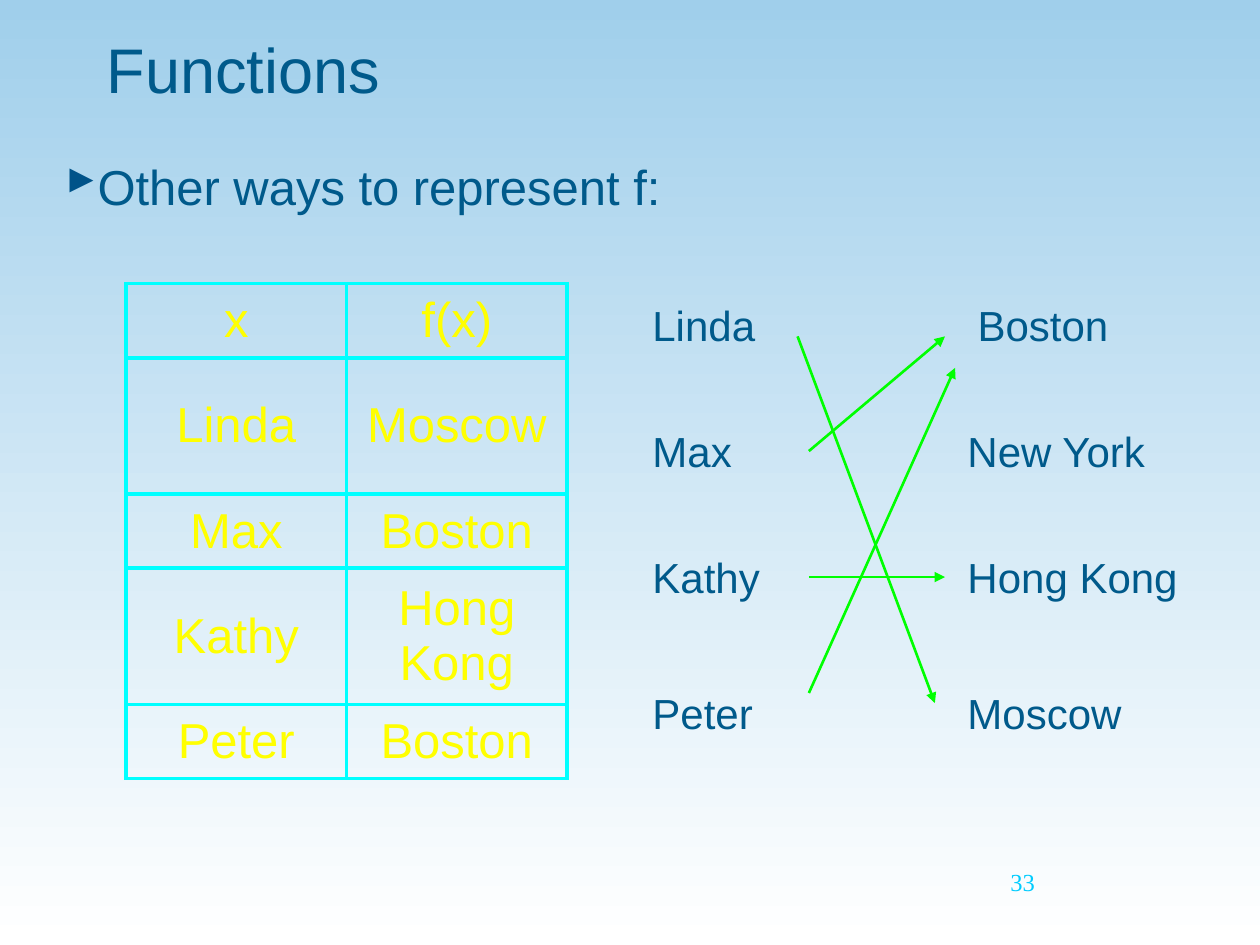
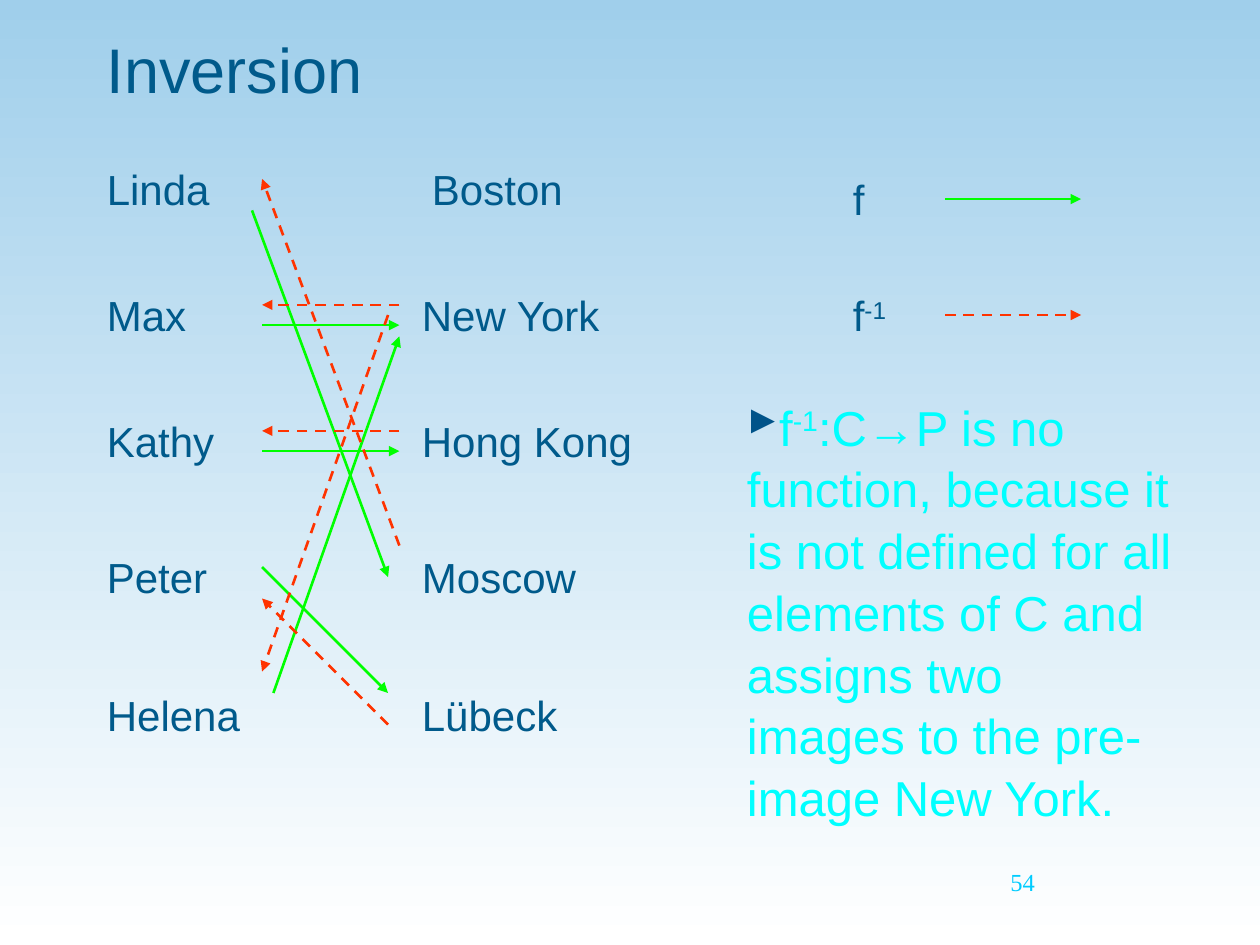
from lxml.etree import SubElement
from pptx import Presentation
from pptx.dml.color import RGBColor
from pptx.enum.dml import MSO_LINE_DASH_STYLE as Dash
from pptx.enum.shapes import MSO_CONNECTOR as Connector
from pptx.enum.text import MSO_ANCHOR as Anchor, PP_ALIGN as Align
from pptx.oxml.ns import qn
from pptx.util import Inches, Pt

SKY = RGBColor(0xA0, 0xCF, 0xEB)
WHITE = RGBColor(0xFF, 0xFF, 0xFF)
NAVY = RGBColor(0x00, 0x5A, 0x8B)
BULLET = RGBColor(0x00, 0x53, 0x89)
CYAN = RGBColor(0x00, 0xFF, 0xFF)
YELLOW = RGBColor(0xFF, 0xFF, 0x00)
GREEN = RGBColor(0x00, 0xFF, 0x00)
RED = RGBColor(0xFF, 0x33, 0x00)
PAGE_BLUE = RGBColor(0x00, 0xCC, 0xFF)

ROW_OFFSETS = (0, 1, 2, 3.08, 4.17)
CITY_OFFSET = 2.5
BOSTON_INDENT = 0.08
LABEL_HEIGHT = 0.57

FUNCTION_ARROWS = (
    (1.25, 0.34, 2.34, 3.25),
    (1.34, 1.25, 2.42, 0.34),
    (1.34, 2.25, 2.42, 2.25),
    (1.34, 3.17, 2.5, 0.59),
)
FORWARD_ARROWS = (
    (1.25, 0.42, 2.33, 3.33),
    (1.33, 1.33, 2.42, 1.33),
    (1.33, 2.33, 2.42, 2.33),
    (1.33, 3.25, 2.33, 4.25),
    (1.42, 4.25, 2.42, 1.42),
)
INVERSE_ARROWS = (
    (2.42, 1.17, 1.33, 1.17),
    (2.33, 1.25, 1.33, 4.08),
    (2.42, 2.17, 1.33, 2.17),
    (2.42, 3.08, 1.33, 0.17),
    (2.33, 4.5, 1.33, 3.5),
)


def set_font(paragraph, size, color, name="Arial"):
    paragraph.font.size = Pt(size)
    paragraph.font.name = name
    paragraph.font.color.rgb = color


def add_bullet(paragraph):
    properties = paragraph._p.get_or_add_pPr()
    properties.set("marL", "0")
    properties.set("indent", "0")
    color = SubElement(properties, qn("a:buClr"))
    SubElement(color, qn("a:srgbClr")).set("val", str(BULLET))
    SubElement(properties, qn("a:buChar")).set("char", "▸")


def add_text(slide, box, parts, size, color, name="Arial", anchor=Anchor.TOP, bullet=False):
    frame = slide.shapes.add_textbox(*map(Inches, box)).text_frame
    frame.word_wrap = True
    frame.vertical_anchor = anchor
    paragraph = frame.paragraphs[0]
    for index, part in enumerate(parts):
        run = paragraph.add_run()
        run.text = part
        if index == 1:
            run._r.get_or_add_rPr().set("baseline", "30000")
    if bullet:
        paragraph.line_spacing = 1.05
        add_bullet(paragraph)
    set_font(paragraph, size, color, name)


def add_label(slide, left, top, width, *parts):
    add_text(slide, (left, top, width, LABEL_HEIGHT), parts, 24, NAVY)


def add_arrow(slide, left, top, ends, color, dashed=False):
    x1, y1, x2, y2 = ends
    arrow = slide.shapes.add_connector(
        Connector.STRAIGHT,
        Inches(left + x1), Inches(top + y1), Inches(left + x2), Inches(top + y2),
    )
    arrow.line.color.rgb = color
    arrow.line.width = Pt(1.5)
    if dashed:
        arrow.line.dash_style = Dash.DASH
    SubElement(arrow.line._get_or_add_ln(), qn("a:tailEnd")).set("type", "triangle")
    SubElement(arrow._element.spPr, qn("a:effectLst"))


def add_base_slide(presentation, title, number):
    slide = presentation.slides.add_slide(presentation.slide_layouts[6])
    fill = slide.background.fill
    fill.gradient()
    fill.gradient_angle = 270
    for stop, color in zip(fill.gradient_stops, (SKY, WHITE)):
        stop.color.rgb = color
    add_text(slide, (0.75, 0.17, 8.5, 0.75), [title], 36, NAVY, anchor=Anchor.MIDDLE)
    add_text(slide, (7.92, 6.83, 2.08, 0.5), [number], 14, PAGE_BLUE, "Times New Roman")
    return slide


def add_mapping(slide, left, top, people, cities, arrows, inverse_arrows=()):
    for offset, person, city in zip(ROW_OFFSETS, people, cities):
        indent = BOSTON_INDENT if city == "Boston" else 0
        add_label(slide, left, top + offset, 2, person)
        add_label(slide, left + CITY_OFFSET + indent, top + offset, 2.25, city)
    for ends in arrows:
        add_arrow(slide, left, top, ends, GREEN)
    for ends in inverse_arrows:
        add_arrow(slide, left, top, ends, RED, dashed=True)


def add_legend_entry(slide, left, top, parts, color, dashed=False):
    add_label(slide, left, top, 0.83, *parts)
    add_arrow(slide, left, top, (0.83, 0.25, 1.91, 0.25), color, dashed)


def style_cell(cell, text):
    properties = cell._tc.get_or_add_tcPr()
    for side in ("lnL", "lnR", "lnT", "lnB"):
        border = SubElement(properties, qn(f"a:{side}"))
        border.set("w", str(Pt(2.25)))
        fill = SubElement(border, qn("a:solidFill"))
        SubElement(fill, qn("a:srgbClr")).set("val", str(CYAN))
    cell.fill.background()
    cell.vertical_anchor = Anchor.MIDDLE
    cell.text = text
    paragraph = cell.text_frame.paragraphs[0]
    paragraph.alignment = Align.CENTER
    set_font(paragraph, 28, YELLOW)


def add_value_table(slide, left, top, width, rows, heights):
    columns = len(rows[0])
    table = slide.shapes.add_table(
        len(rows), columns, Inches(left), Inches(top), Inches(width), Inches(sum(heights))
    ).table
    table.first_row = False
    table.horz_banding = False
    for column in table.columns:
        column.width = Inches(width / columns)
    for row, height, texts in zip(table.rows, heights, rows):
        row.height = Inches(height)
        for cell, text in zip(row.cells, texts):
            style_cell(cell, text)


def build_functions(presentation):
    slide = add_base_slide(presentation, "Functions", "33")
    add_text(slide, (0.42, 1.17, 9.33, 0.67), ["Other ways to represent f:"], 28, NAVY, bullet=True)
    rows = (
        ("x", "f(x)"),
        ("Linda", "Moscow"),
        ("Max", "Boston"),
        ("Kathy", "Hong Kong"),
        ("Peter", "Boston"),
    )
    add_value_table(slide, 1, 2.25, 3.5, rows, (0.59, 1.08, 0.59, 1.08, 0.59))
    add_mapping(
        slide, 5.08, 2.33,
        ("Linda", "Max", "Kathy", "Peter"),
        ("Boston", "New York", "Hong Kong", "Moscow"),
        FUNCTION_ARROWS,
    )


def build_inversion(presentation):
    slide = add_base_slide(presentation, "Inversion", "54")
    explanation = (
        "f",
        "-1",
        ":C→P is no function, because it is not defined for all elements of C "
        "and assigns two images to the pre-image New York.",
    )
    add_text(slide, (5.83, 3.08, 3.58, 3.67), explanation, 28, CYAN, bullet=True)
    add_mapping(
        slide, 0.75, 1.25,
        ("Linda", "Max", "Kathy", "Peter", "Helena"),
        ("Boston", "New York", "Hong Kong", "Moscow", "Lübeck"),
        FORWARD_ARROWS,
        INVERSE_ARROWS,
    )
    add_legend_entry(slide, 6.67, 1.33, ["f"], GREEN)
    add_legend_entry(slide, 6.67, 2.25, ["f", "-1"], RED, dashed=True)


def main():
    presentation = Presentation()
    presentation.slide_width = Inches(10)
    presentation.slide_height = Inches(7.5)
    build_functions(presentation)
    build_inversion(presentation)
    presentation.save("out.pptx")


if __name__ == "__main__":
    main()
